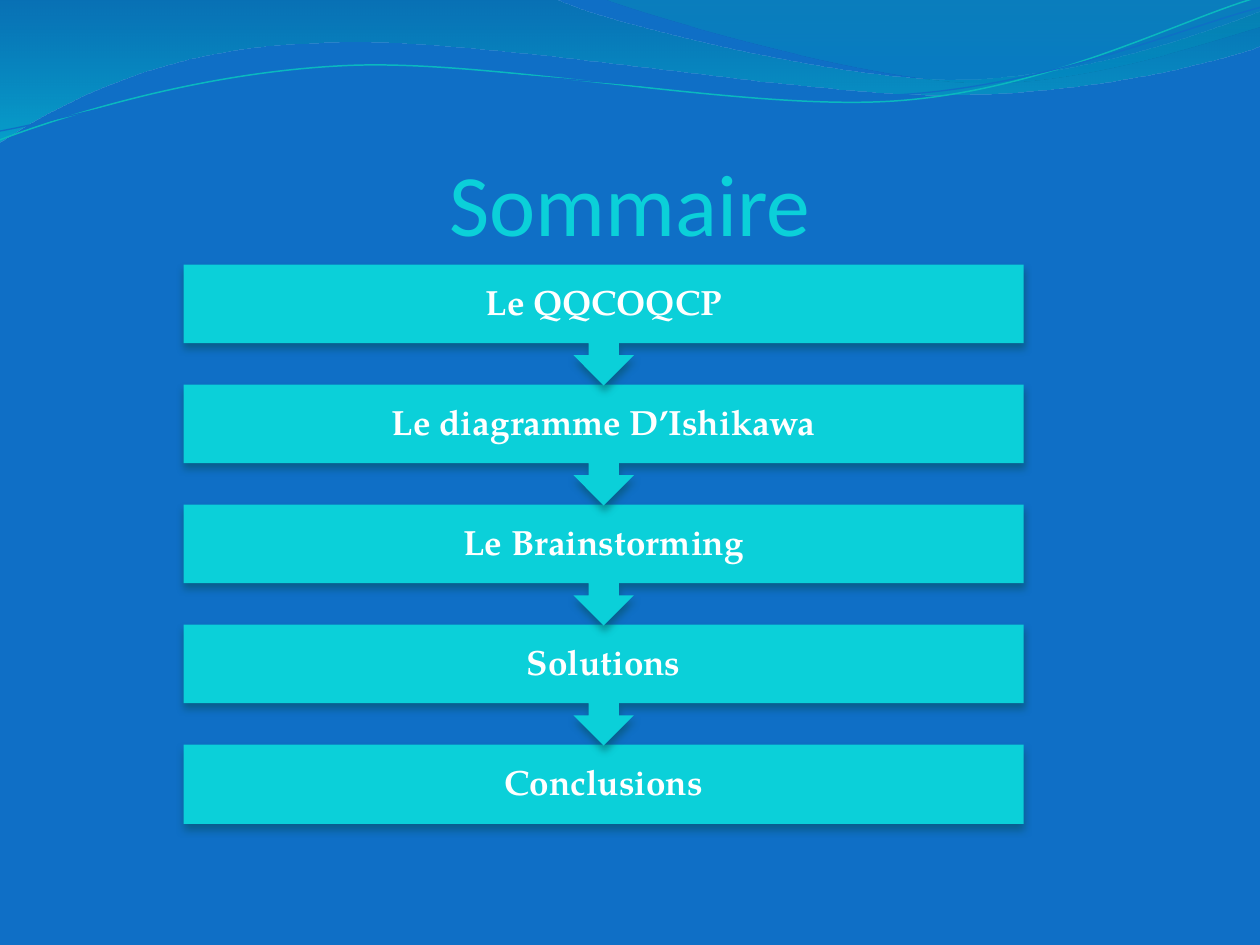
import dataclasses

import lxml.etree
import pptx
import pptx.dml.color
import pptx.enum.shapes
import pptx.enum.text
import pptx.oxml.ns
import pptx.util


@dataclasses.dataclass(frozen=True)
class Theme:
    background: str = "0F6FC6"
    accent: str = "0BD0D9"
    wave_line: str = "0AB8BF"
    shadow: str = "024B4E"
    text: str = "FFFFFF"
    title_font: str = "Calibri"
    step_font: str = "TeX Gyre Pagella"
    title_size: int = 50
    step_size: int = 20


def draw_curve(slide, segments, closed):
    lengths = [[pptx.util.Inches(value) for value in segment] for segment in segments]
    builder = slide.shapes.build_freeform(*lengths[0])
    builder.add_line_segments([segment[-2:] for segment in lengths[1:]], close=closed)
    shape = builder.convert_to_shape()
    shape.shadow.inherit = False
    for element, segment in zip(list(shape._element.spPr.iter(qn("a:lnTo"))), lengths[1:]):
        if len(segment) == 6:
            element.tag = qn("a:cubicBezTo")
            for index in (0, 1):
                x, y = segment[2 * index:2 * index + 2]
                control = lxml.etree.SubElement(
                    element, qn("a:pt"), x=str(x - shape.left), y=str(y - shape.top))
                element.insert(index, control)
    return shape


def write_text(shape, text, font, size, color, bold, inset):
    frame = shape.text_frame
    frame.word_wrap = True
    frame.margin_left = frame.margin_right = pptx.util.Inches(inset)
    paragraph = frame.paragraphs[0]
    paragraph.alignment = pptx.enum.text.PP_ALIGN.CENTER
    run = paragraph.add_run()
    run.text = text
    run.font.name = font
    run.font.size = pptx.util.Pt(size)
    run.font.bold = bold
    run.font.color.rgb = rgb(color)
    return frame


rgb = pptx.dml.color.RGBColor.from_string
qn = pptx.oxml.ns.qn
theme = Theme()
presentation = pptx.Presentation()
presentation.slide_width = pptx.util.Inches(10)
presentation.slide_height = pptx.util.Inches(7.5)
column, row = presentation.slide_width / 48, presentation.slide_height / 100
slide = presentation.slides.add_slide(presentation.slide_layouts[6])
slide.background.fill.solid()
slide.background.fill.fore_color.rgb = rgb(theme.background)

bands = [
    ([(0, 0), (4.4, -0.01), (4.76, 0.17, 6.64, 0.63, 7.58, 0.63),
      (8.53, 0.63, 9.58, 0.26, 10, 0.09), (10.01, 0.36),
      (9.83, 0.44, 8.7, 0.76, 7.46, 0.75), (6.22, 0.75, 3.82, 0.28, 2.57, 0.34),
      (1.29, 0.36, 0.46, 0.83, -0.01, 1.13), (0, 0)],
     [(0, "0074A1", 45), (1, "00C6CF", 55)]),
    ([(4.79, -0.01), (5.09, 0.11, 6.82, 0.62, 7.69, 0.65),
      (8.56, 0.69, 9.61, 0.32, 10, 0.21), (10, 0), (4.79, -0.01)],
     [(0, "00A1A9", 30), (0.8, "008BBF", 45)]),
]
for segments, stops in bands:
    band = draw_curve(slide, segments, True)
    band.line.fill.background()
    band.fill.gradient()
    band.fill.gradient_angle = 270
    for stop, (position, color, opacity) in zip(band.fill.gradient_stops, stops):
        stop.position = position
        stop.color.rgb = rgb(color)
    for element, (position, color, opacity) in zip(band._element.spPr.iter(qn("a:srgbClr")), stops):
        lxml.etree.SubElement(element, qn("a:alpha"), val=str(opacity * 1000))

ripples = [
    ([(0, 1.11), (0.48, 0.93, 1.58, 0.57, 2.77, 0.52), (3.95, 0.47, 5.93, 0.89, 7.13, 0.8),
      (8.33, 0.71, 9.38, 0.15, 9.98, -0.02)], theme.wave_line, 0.85),
    ([(0, 1.04), (0.47, 0.96, 1.64, 0.61, 2.83, 0.56), (4.03, 0.51, 5.97, 0.84, 7.17, 0.75),
      (8.36, 0.67, 9.41, 0.21, 10, 0.06)], theme.background, 0.75),
]
for segments, color, weight in ripples:
    ripple = draw_curve(slide, segments, False)
    ripple.fill.background()
    ripple.line.color.rgb = rgb(color)
    ripple.line.width = pptx.util.Pt(weight)

title = slide.shapes.add_textbox(
    int(2.4 * column), int(10.27 * row), int(43.2 * column), int(16.6 * row))
frame = write_text(title, "Sommaire", theme.title_font, theme.title_size, theme.accent, False, 0)
frame.vertical_anchor = pptx.enum.text.MSO_ANCHOR.BOTTOM
frame.margin_bottom = 0

steps = ["Le QQCOQCP", "Le diagramme D’Ishikawa", "Le Brainstorming", "Solutions", "Conclusions"]
kinds = pptx.enum.shapes.MSO_SHAPE
for index, label in reversed(list(enumerate(steps))):
    last = index == len(steps) - 1
    step = slide.shapes.add_shape(
        kinds.RECTANGLE if last else kinds.DOWN_ARROW_CALLOUT,
        int(7 * column), int((28 + 12.7 * index) * row),
        int(32 * column), int((8.4 if last else 12.8) * row))
    if not last:
        step.adjustments[3] = 0.65
    step.fill.solid()
    step.fill.fore_color.rgb = rgb(theme.accent)
    step.line.fill.background()
    step.shadow.inherit = False
    shadow = lxml.etree.SubElement(
        step._element.spPr.find(qn("a:effectLst")), qn("a:outerShdw"),
        blurRad=str(pptx.util.Pt(4.5)), dist=str(pptx.util.Pt(3)), dir="5400000", rotWithShape="0")
    shade = lxml.etree.SubElement(shadow, qn("a:srgbClr"), val=theme.shadow)
    lxml.etree.SubElement(shade, qn("a:alpha"), val="48000")
    frame = write_text(step, label, theme.step_font, theme.step_size, theme.text, True, 0.16)
    frame.vertical_anchor = pptx.enum.text.MSO_ANCHOR.MIDDLE
    frame.margin_top = frame.margin_bottom = pptx.util.Inches(0.16)
    frame.paragraphs[0].line_spacing = 0.9

presentation.save("out.pptx")
